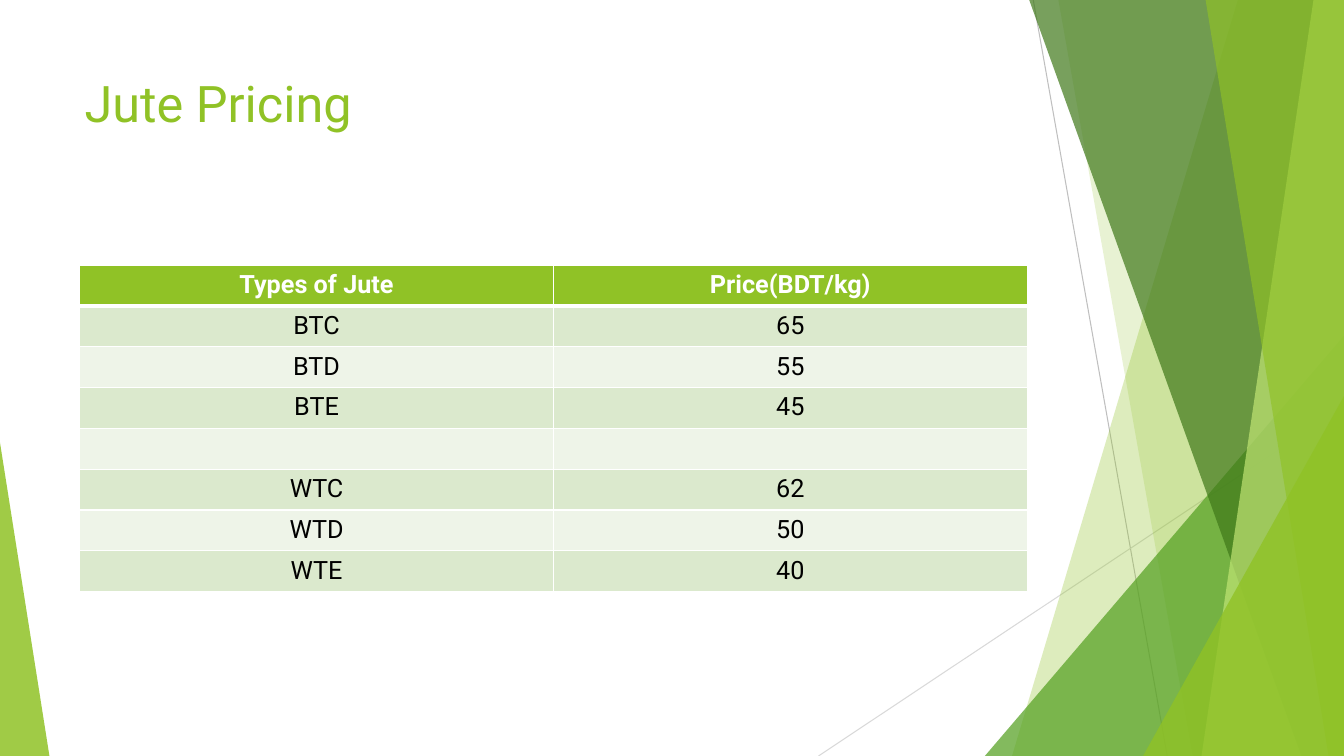
from dataclasses import dataclass
from typing import Any

from lxml.etree import SubElement
from pptx import Presentation
from pptx.dml.color import RGBColor
from pptx.enum.shapes import MSO_CONNECTOR, MSO_SHAPE
from pptx.enum.text import MSO_ANCHOR, MSO_AUTO_SIZE, PP_ALIGN
from pptx.oxml import parse_xml
from pptx.oxml.ns import nsdecls, qn
from pptx.util import Inches, Pt

SLIDE_WIDTH, SLIDE_HEIGHT = Inches(13.33), Inches(7.5)

LIME = RGBColor(0x90, 0xC2, 0x26)
PALE_LIME = RGBColor(0xC0, 0xE4, 0x74)
GREEN = RGBColor(0x54, 0xA0, 0x21)
DARK_GREEN = RGBColor(0x3F, 0x78, 0x19)
BAND_DARK = RGBColor(0xDB, 0xE9, 0xCD)
BAND_LIGHT = RGBColor(0xEE, 0xF4, 0xE8)
GREY = RGBColor(0xBF, 0xBF, 0xBF)
LIGHT_GREY = RGBColor(0xD9, 0xD9, 0xD9)
WHITE = RGBColor(0xFF, 0xFF, 0xFF)
BLACK = RGBColor(0x00, 0x00, 0x00)

TITLE_FONT = {"name": "Roboto", "size": Pt(36), "bold": False}
HEADER_FONT = {"name": "Roboto", "size": Pt(18), "bold": True}
BODY_FONT = HEADER_FONT | {"bold": False}

PRICES = [
    ("Types of Jute", "Price(BDT/kg)"),
    ("BTC", "65"),
    ("BTD", "55"),
    ("BTE", "45"),
    ("", ""),
    ("WTC", "62"),
    ("WTD", "50"),
    ("WTE", "40"),
]


# All positions are percentages of the slide's width and height.
def across(percent: float) -> int:
    return round(SLIDE_WIDTH * percent / 100)


def down(percent: float) -> int:
    return round(SLIDE_HEIGHT * percent / 100)


@dataclass
class Ray:
    start: tuple[float, float]
    end: tuple[float, float]
    color: RGBColor


@dataclass
class Blade:
    """Full-height panel with a slanted left edge, ending at the right side."""
    top_left: float
    bottom_left: float
    color: RGBColor
    opacity: int


@dataclass
class Corner:
    """Right triangle standing on the slide's bottom edge."""
    left: float
    top: float
    width: float
    apex: float
    color: RGBColor
    opacity: int


RAYS = [
    Ray((76.88, 0), (86.85, 100), GREY),
    Ray((100, 53.73), (60.9, 100), LIGHT_GREY),
]
FACETS = [
    Blade(92.1, 75.3, LIME, 30),
    Blade(78.75, 88.73, LIME, 20),
    Corner(73.28, 44.4, 26.72, 1, GREEN, 72),
    Blade(76.58, 96.83, DARK_GREEN, 70),
    Blade(97.73, 89.4, PALE_LIME, 70),
    Blade(89.7, 98.85, LIME, 65),
    Corner(85.05, 52.4, 14.95, 1, LIME, 80),
    Corner(0, 58.53, 3.68, 0, LIME, 85),
]


def format_font(font: Any, values: dict[str, Any], color: RGBColor) -> None:
    for name, value in values.items():
        setattr(font, name, value)
    font.color.rgb = color


def draw_ray(slide: Any, ray: Ray) -> None:
    (x1, y1), (x2, y2) = ray.start, ray.end
    connector = slide.shapes.add_connector(
        MSO_CONNECTOR.STRAIGHT, across(x1), down(y1), across(x2), down(y2))
    connector.line.color.rgb = ray.color
    connector.line.width = Pt(0.75)
    SubElement(connector.element.spPr, qn("a:effectLst"))


def draw_facet(slide: Any, facet: Blade | Corner) -> None:
    if isinstance(facet, Blade):
        builder = slide.shapes.build_freeform(across(facet.top_left), 0)
        builder.add_line_segments([
            (SLIDE_WIDTH, 0),
            (SLIDE_WIDTH, SLIDE_HEIGHT),
            (across(facet.bottom_left), SLIDE_HEIGHT),
        ])
        shape = builder.convert_to_shape()
    else:
        shape = slide.shapes.add_shape(
            MSO_SHAPE.ISOSCELES_TRIANGLE, across(facet.left), down(facet.top),
            across(facet.width), down(100 - facet.top))
        shape.adjustments[0] = facet.apex
    shape.shadow.inherit = False
    shape.line.fill.background()
    shape.fill.solid()
    shape.fill.fore_color.rgb = facet.color
    color_element = shape.element.spPr.find(qn("a:solidFill"))[0]
    SubElement(color_element, qn("a:alpha"), val=str(facet.opacity * 1000))


def write_title(slide: Any, text: str) -> None:
    title = slide.shapes.title
    title.left, title.top = across(5.55), down(8.93)
    title.width, title.height = across(70.5), down(19.2)
    frame = title.text_frame
    frame.text = text
    frame.word_wrap = True
    frame.auto_size = MSO_AUTO_SIZE.NONE
    frame.vertical_anchor = MSO_ANCHOR.TOP
    paragraph = frame.paragraphs[0]
    paragraph.alignment = PP_ALIGN.LEFT
    format_font(paragraph.runs[0].font, TITLE_FONT, LIME)
    # Keep the title in front of the facets
    title.element.getparent().append(title.element)


def set_borders(cell: Any, widths: dict[str, int]) -> None:
    properties = cell._tc.get_or_add_tcPr()
    for position, (side, width) in enumerate(widths.items()):
        properties.insert(position, parse_xml(
            f'<a:ln{side} {nsdecls("a")} w="{Pt(width)}"><a:solidFill>'
            f'<a:srgbClr val="{WHITE}"/></a:solidFill></a:ln{side}>'))


def add_price_table(slide: Any) -> None:
    table = slide.shapes.add_table(
        len(PRICES), len(PRICES[0]), across(5.93), down(35.07),
        across(70.5), down(5.4 * len(PRICES))).table
    for row, texts in enumerate(PRICES):
        header = row == 0
        band = BAND_DARK if row % 2 else BAND_LIGHT
        for column, text in enumerate(texts):
            cell = table.cell(row, column)
            cell.fill.solid()
            cell.fill.fore_color.rgb = LIME if header else band
            set_borders(cell, {"L": 1, "R": 1, "T": 3 if row == 1 else 1,
                               "B": 3 if header else 1})
            paragraph = cell.text_frame.paragraphs[0]
            paragraph.alignment = PP_ALIGN.CENTER
            if text:
                run = paragraph.add_run()
                run.text = text
                format_font(run.font, HEADER_FONT if header else BODY_FONT,
                            WHITE if header else BLACK)


def main() -> None:
    presentation = Presentation()
    presentation.slide_width = SLIDE_WIDTH
    presentation.slide_height = SLIDE_HEIGHT
    slide = presentation.slides.add_slide(presentation.slide_layouts[5])

    # Faceted backdrop
    for ray in RAYS:
        draw_ray(slide, ray)
    for facet in FACETS:
        draw_facet(slide, facet)

    # Content
    write_title(slide, "Jute Pricing")
    add_price_table(slide)
    presentation.save("out.pptx")


if __name__ == "__main__":
    main()
